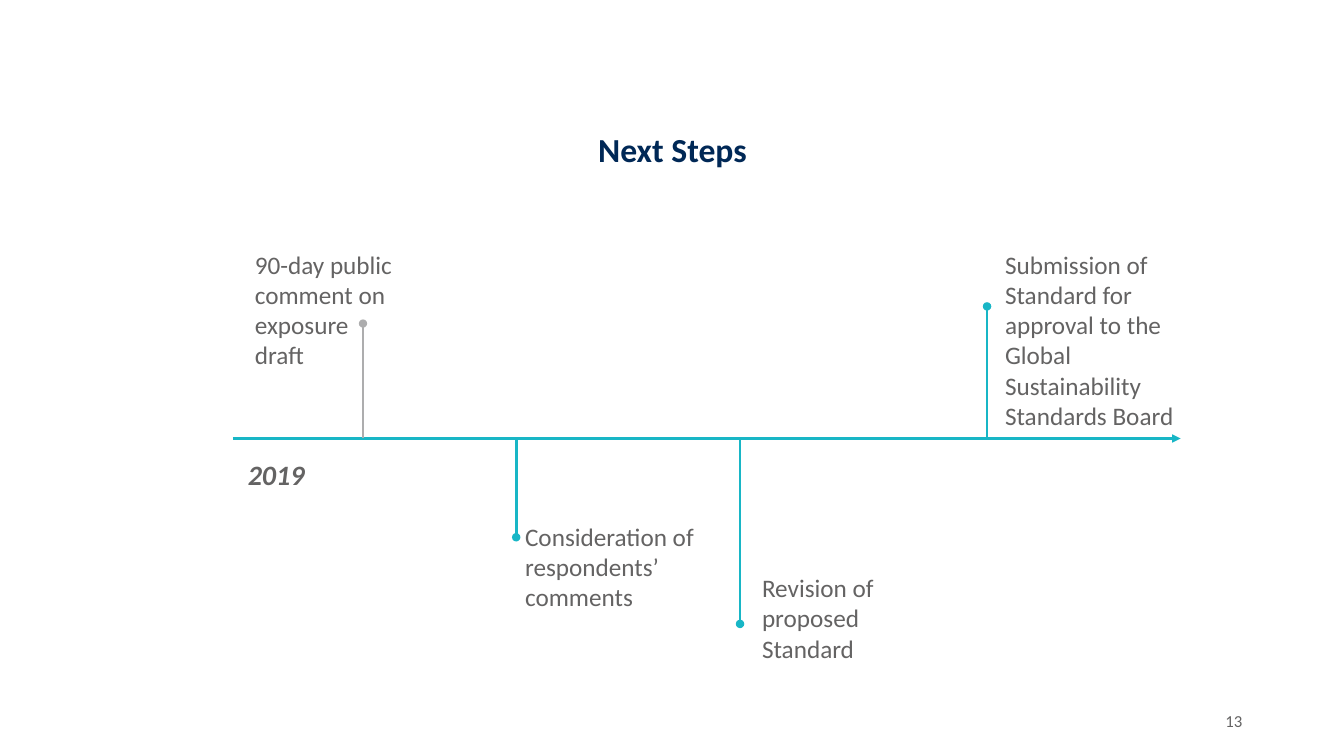
from dataclasses import dataclass

from lxml import etree
from pptx import Presentation
from pptx.dml.color import RGBColor
from pptx.enum.shapes import MSO_CONNECTOR, MSO_SHAPE
from pptx.enum.text import MSO_ANCHOR, PP_ALIGN
from pptx.oxml.ns import qn
from pptx.util import Pt

PX = 9144  # EMU per px, 100 px to the inch
LINE = MSO_CONNECTOR.STRAIGHT
RECT = MSO_SHAPE.RECTANGLE
TOP, MID = MSO_ANCHOR.TOP, MSO_ANCHOR.MIDDLE
LEFT, CENTER, RIGHT = PP_ALIGN.LEFT, PP_ALIGN.CENTER, PP_ALIGN.RIGHT


@dataclass(frozen=True)
class Theme:
    font: str = "Calibri"
    navy: str = "002856"
    teal: str = "18B6C6"
    grey: str = "ADADAE"
    ink: str = "646363"
    white: str = "FFFFFF"
    title: int = 24
    year: int = 20
    body: int = 18
    small: int = 12
    thick: float = 2
    thin: float = 1.75


THEME = Theme()

# text, stem x, stem end, label left, label top, label width, label height,
# stem colour, stem weight; places are relative to the axis start
STEPS = [
    ("90-day public comment on exposure draft",
     129, -114, 12, -193, 166, 131, THEME.grey, THEME.thin),
    ("Consideration of respondents’ comments",
     281, 98, 280, 77, 207, 101, THEME.teal, THEME.thick),
    ("Revision of proposed Standard",
     503, 184, 515, 128, 207, 101, THEME.teal, THEME.thick),
    ("Submission of Standard for approval to the Global Sustainability "
     "Standards Board",
     748, -131, 756, -193, 207, 192, THEME.teal, THEME.thick),
]


def color(code):
    return RGBColor.from_string(code)


def write(shape, text, size, ink=THEME.ink, align=LEFT, anchor=TOP):
    """Fill a shape with one paragraph and return its run."""
    frame = shape.text_frame
    frame.word_wrap = True
    frame.vertical_anchor = anchor
    frame.text = text
    para = frame.paragraphs[0]
    para.alignment = align
    run = para.runs[0]
    run.font.name = THEME.font
    run.font.size = Pt(size)
    run.font.color.rgb = color(ink)
    return run


def add_text(slide, box, text, size, **style):
    shape = slide.shapes.add_textbox(*(n * PX for n in box))
    write(shape, text, size, **style)
    return shape


def add_line(slide, start, end, ink, weight, tip):
    """Draw a line that carries the given arrowhead at its end."""
    line = slide.shapes.add_connector(
        LINE, *(n * PX for n in (*start, *end)))
    line.line.color.rgb = color(ink)
    line.line.width = Pt(weight)
    props = line._element.spPr
    etree.SubElement(props.find(qn("a:ln")), qn("a:tailEnd"), type=tip)
    etree.SubElement(props, qn("a:effectLst"))


def add_title(slide, box):
    shape = add_text(slide, box, "Next Steps", THEME.title,
                     ink=THEME.navy, align=CENTER, anchor=MID)
    para = shape.text_frame.paragraphs[0]
    para.line_spacing = 0.9
    para.runs[0].font.bold = True


def add_year(slide, box):
    shape = slide.shapes.add_shape(RECT, *(n * PX for n in box))
    shape.shadow.inherit = False
    shape.fill.solid()
    shape.fill.fore_color.rgb = color(THEME.white)
    shape.line.fill.background()
    run = write(shape, "2019", THEME.year)
    run.font.bold = True
    run.font.italic = True


def add_timeline(slide, left, axis, width):
    add_line(slide, (left, axis), (left + width, axis),
             THEME.teal, THEME.thick, "triangle")
    for text, stem, end, x, y, wide, high, ink, weight in STEPS:
        add_line(slide, (left + stem, axis), (left + stem, axis + end),
                 ink, weight, "oval")
        add_text(slide, (left + x, axis + y, wide, high), text, THEME.body)
    add_year(slide, (left + 5, axis + 14, 103, 44))


def main():
    deck = Presentation()
    deck.slide_width, deck.slide_height = 1333 * PX, 750 * PX
    slide = deck.slides.add_slide(deck.slide_layouts[6])
    add_title(slide, (174, 130, 986, 41))
    add_timeline(slide, 231, 435, 940)
    add_text(slide, (1171, 695, 71, 40), "13", THEME.small,
             align=RIGHT, anchor=MID)
    deck.save("out.pptx")


if __name__ == "__main__":
    main()
